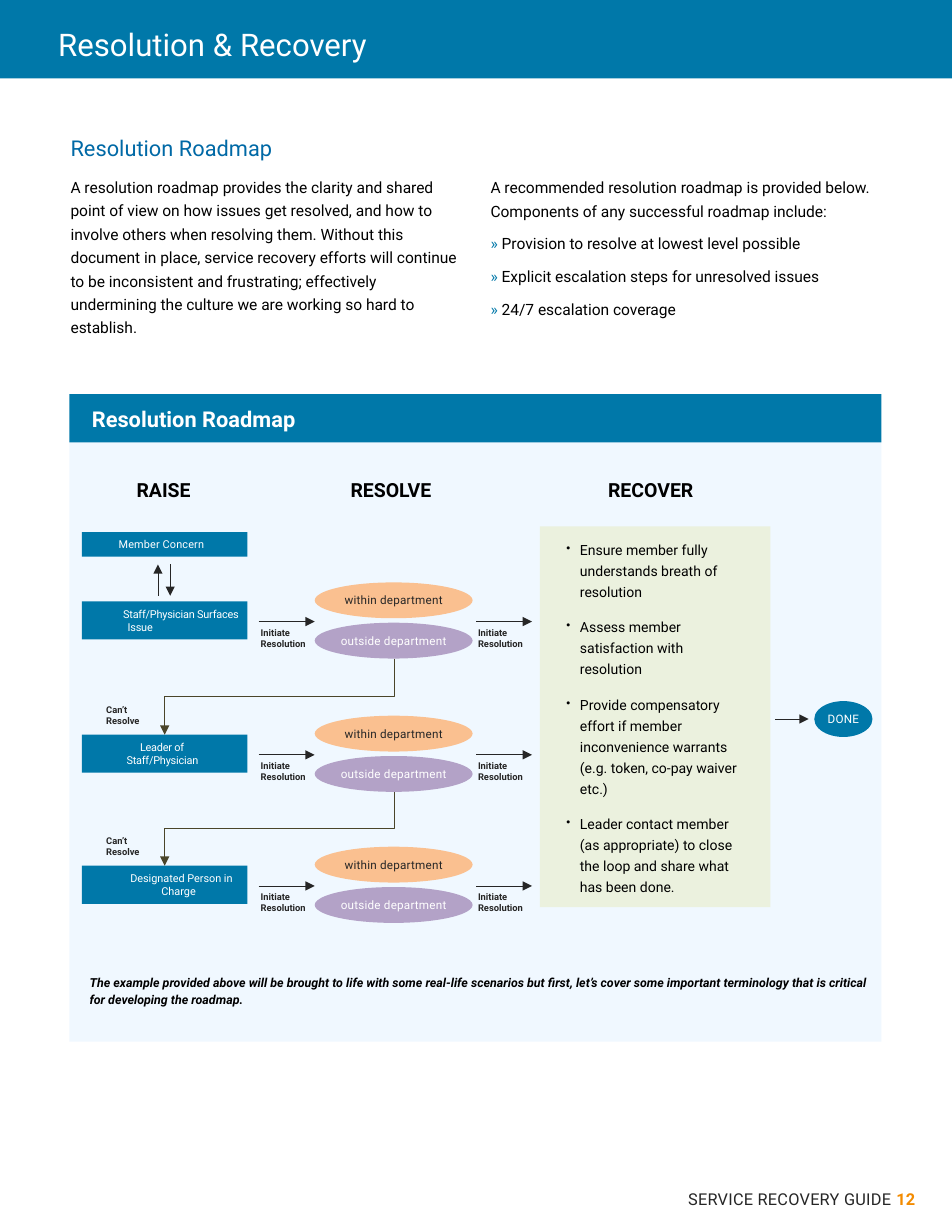
from lxml import etree
from pptx import Presentation
from pptx.dml.color import RGBColor
from pptx.enum.shapes import MSO_CONNECTOR, MSO_SHAPE
from pptx.enum.text import MSO_ANCHOR, MSO_AUTO_SIZE, PP_ALIGN
from pptx.oxml.ns import qn
from pptx.util import Inches, Pt

RECT, OVAL = MSO_SHAPE.RECTANGLE, MSO_SHAPE.OVAL
STRAIGHT, ELBOW = MSO_CONNECTOR.STRAIGHT, MSO_CONNECTOR.ELBOW
TOP, MIDDLE = MSO_ANCHOR.TOP, MSO_ANCHOR.MIDDLE
LEFT, CENTER, RIGHT = PP_ALIGN.LEFT, PP_ALIGN.CENTER, PP_ALIGN.RIGHT
FONT = "Roboto"
COLORS = {
    "blue": "0078A9", "heading": "0069A6", "orange": "F38B00", "ink": "262626",
    "black": "000000", "white": "FFFFFF", "panel": "B4DCFF", "peach": "FAC090",
    "purple": "B3A2C7", "green": "EBF1DE", "bend": "4A452A",
}


def color(name):
    return RGBColor.from_string(COLORS[name])


def prepare(shape, insets=(0, 0.01, 0, 0), anchor=TOP, wrap=True):
    frame = shape.text_frame
    frame.auto_size = MSO_AUTO_SIZE.NONE
    frame.word_wrap = wrap
    frame.vertical_anchor = anchor
    (frame.margin_left, frame.margin_top,
     frame.margin_right, frame.margin_bottom) = map(Inches, insets)
    return frame


def write(frame, spans, size, align=LEFT, before=0, line=1, margin=0, indent=0,
          bullet=None, bold=False, italic=False, spacing=0):
    first = not frame.paragraphs[0].runs
    para = frame.paragraphs[0] if first else frame.add_paragraph()
    para.alignment = align
    para.line_spacing = line
    para.space_before = Pt(0 if first else before)
    props = para._p.get_or_add_pPr()
    props.set("marL", str(Inches(margin)))
    props.set("indent", str(Inches(indent)))
    if bullet:
        etree.SubElement(props, qn("a:buSzPct")).set("val", "83000")
        etree.SubElement(props, qn("a:buChar")).set("char", bullet)
    else:
        etree.SubElement(props, qn("a:buNone"))
    for text, tint in spans:
        span = para.add_run()
        span.text = text
        span.font.name = FONT
        span.font.size = Pt(size)
        span.font.bold = bold
        span.font.italic = italic
        span.font.color.rgb = color(tint)
        if spacing:
            span._r.get_or_add_rPr().set("spc", str(spacing))
    return para


def place(shape, left, top, width, height):
    shape.left, shape.top = Inches(left), Inches(top)
    shape.width, shape.height = Inches(width), Inches(height)


def add_box(page, kind, fill, left, top, width, height):
    box = page.shapes.add_shape(kind, Inches(left), Inches(top), Inches(width), Inches(height))
    box.shadow.inherit = False
    box.fill.solid()
    box.fill.fore_color.rgb = color(fill)
    box.line.fill.background()
    return box


def add_text(page, left, top, width, height, **options):
    box = page.shapes.add_textbox(Inches(left), Inches(top), Inches(width), Inches(height))
    return prepare(box, **options)


def add_arrow(page, x1, y1, x2, y2, kind=STRAIGHT, tint="ink"):
    arrow = page.shapes.add_connector(kind, Inches(x1), Inches(y1), Inches(x2), Inches(y2))
    arrow.line.color.rgb = color(tint)
    arrow.line.width = Pt(0.5)
    etree.SubElement(arrow.line._get_or_add_ln(), qn("a:tailEnd")).set("type", "triangle")
    etree.SubElement(arrow._element.spPr, qn("a:effectLst"))
    return arrow


def add_bend(page, x1, y1, x2, y2):
    center_x, center_y = (x1 + x2) / 2, (y1 + y2) / 2
    half_drop, half_run = (y2 - y1) / 2, (x1 - x2) / 2
    bend = add_arrow(page, center_x - half_drop, center_y - half_run,
                     center_x + half_drop, center_y + half_run, ELBOW, "bend")
    bend._element.spPr.find(qn("a:xfrm")).set("rot", "5400000")


def add_caption(page, left, top, width, words):
    frame = add_text(page, left, top, width, 0.3, insets=(0.1, 0.05, 0.1, 0.05), wrap=False)
    for word in words:
        write(frame, [(word, "ink")], 6, bold=True)


def add_step(page, left, top, height, label, **layout):
    box = add_box(page, RECT, "blue", left, top, 1.48, height)
    write(prepare(box, (0, 0.05, 0, 0.05), MIDDLE), [(label, "white")], 7, **layout)


def add_oval(page, left, top, width, label, fill, tint):
    oval = add_box(page, OVAL, fill, left, top, width, 0.32)
    write(prepare(oval, (0, 0.05, 0, 0.05), MIDDLE), [(label, tint)], 7.5,
          align=CENTER, spacing=10)


def add_header(page, left, top, width, height):
    add_box(page, RECT, "blue", left, top, width, height)
    title = page.shapes.title
    place(title, left + 0.52, top + 0.21, 7.48, 0.35)
    write(prepare(title, anchor=MIDDLE), [("Resolution & Recovery", "white")], 20)
    page.shapes._spTree.append(title._element)


def add_intro(body, left, top, width, height):
    place(body, left, top, width, height)
    frame = prepare(body)
    write(frame, [("Resolution Roadmap", "heading")], 14)
    write(frame, [("A resolution roadmap provides the clarity and shared point of view on how "
                   "issues get resolved, and how to involve others when resolving them. Without "
                   "this document in place, service recovery efforts will continue to be "
                   "inconsistent and frustrating; effectively undermining the culture we are "
                   "working so hard to establish.", "black")], 10, before=8.2, line=1.25)


def add_components(body, left, top, width, height):
    place(body, left, top, width, height)
    frame = prepare(body)
    write(frame, [("A recommended resolution roadmap is provided below. Components of any "
                   "successful roadmap include:", "black")], 10, line=1.25)
    for item in ("Provision to resolve at lowest level possible",
                 "Explicit escalation steps for unresolved issues",
                 "24/7 escalation coverage"):
        write(frame, [("» ", "blue"), (item, "black")], 10, before=6, line=1.25,
              margin=0.12, indent=-0.12)


def add_level(page, left, top, label, layout):
    add_step(page, left + 0.11, top + 0.17, 0.34, label, **layout)
    add_oval(page, left + 2.19, top, 1.41, "within department", "peach", "ink")
    add_oval(page, left + 2.19, top + 0.36, 1.41, "outside department", "purple", "white")
    for start in (1.69, 3.63):
        add_caption(page, left + start - 0.08, top + 0.35, 0.64, ("Initiate", "Resolution"))
        add_arrow(page, left + start, top + 0.35, left + start + 0.5, top + 0.35)


def add_recover(page, left, top, width, height):
    box = add_box(page, RECT, "green", left, top, width, height)
    frame = prepare(box, (0.1, 0.1, 0.29, 0.1))
    for item in ("Ensure member fully understands breath of resolution",
                 "Assess member satisfaction with resolution",
                 "Provide compensatory effort if member inconvenience warrants "
                 "(e.g. token, co-pay waiver etc.)",
                 "Leader contact member (as appropriate) to close the loop and share "
                 "what has been done."):
        write(frame, [(item, "black")], 9, before=9, line=1.25, margin=0.26,
              indent=-0.12, bullet="•")


def add_roadmap(page, left, top, width, height):
    panel = add_box(page, RECT, "panel", left, top + 0.42, width, height - 0.42)
    tint = panel._element.spPr.find(qn("a:solidFill"))[0]
    etree.SubElement(tint, qn("a:alpha")).set("val", "20000")
    banner = add_box(page, RECT, "blue", left, top, width, 0.43)
    write(prepare(banner, (0, 0, 0, 0), MIDDLE), [("Resolution Roadmap", "white")], 14,
          margin=0.2, bold=True)

    for heading, offset in (("RAISE", 0.6), ("RESOLVE", 2.51), ("RECOVER", 4.81)):
        frame = add_text(page, left + offset, top + 0.74, 0.95, 0.22)
        write(frame, [(heading, "black")], 12.5, bold=True)

    add_step(page, left + 0.11, top + 1.23, 0.22, "Member Concern", margin=0.33, spacing=10)
    add_arrow(page, left + 0.79, top + 1.8, left + 0.79, top + 1.52)
    add_arrow(page, left + 0.9, top + 1.52, left + 0.9, top + 1.8)

    levels = (
        (1.68, "Staff/Physician Surfaces Issue", dict(margin=0.41, indent=-0.04, spacing=-10)),
        (2.87, "Leader of Staff/Physician", dict(margin=0.4, indent=0.12, spacing=-10)),
        (4.04, "Designated Person in Charge", dict(margin=0.25, indent=0.05, align=CENTER)),
    )
    for offset, label, layout in levels:
        add_level(page, left, top + offset, label, layout)
    for (upper, *_), (lower, *_) in zip(levels, levels[1:]):
        add_bend(page, left + 2.9, top + upper + 0.68, left + 0.85, top + lower + 0.17)
        add_caption(page, left + 0.23, top + lower - 0.15, 0.52, ("Can’t", "Resolve"))

    add_recover(page, left + 4.2, top + 1.18, 2.06, 3.4)
    add_arrow(page, left + 6.3, top + 2.9, left + 6.6, top + 2.9)
    add_oval(page, left + 6.65, top + 2.74, 0.52, "DONE", "blue", "white")

    note = add_text(page, left + 0.18, top + 5.16, 7, 0.31)
    write(note, [("The example provided above will be brought to life with some real-life "
                  "scenarios but ﬁrst, let’s cover some important terminology that is "
                  "critical for developing the roadmap.", "black")], 8, line=1.14,
          bold=True, italic=True)


def add_footer(page, left, top, width, height):
    frame = add_text(page, left, top, width, height, insets=(0.1, 0.05, 0.1, 0.05))
    para = write(frame, [("SERVICE RECOVERY GUIDE ", "ink"), ("12", "orange")], 10.5,
                 align=RIGHT, spacing=20)
    para.runs[-1].font.bold = True


def main():
    deck = Presentation()
    deck.slide_width, deck.slide_height = Inches(8.5), Inches(11)
    page = deck.slides.add_slide(deck.slide_layouts[3])
    add_header(page, 0, 0, 8.5, 0.7)
    add_intro(page.placeholders[1], 0.63, 1.19, 3.52, 1.82)
    add_components(page.placeholders[2], 4.38, 1.54, 3.51, 1.51)
    add_roadmap(page, 0.62, 3.52, 7.25, 5.78)
    add_footer(page, 0.25, 10.57, 8.02, 0.28)
    deck.save("out.pptx")


if __name__ == "__main__":
    main()
